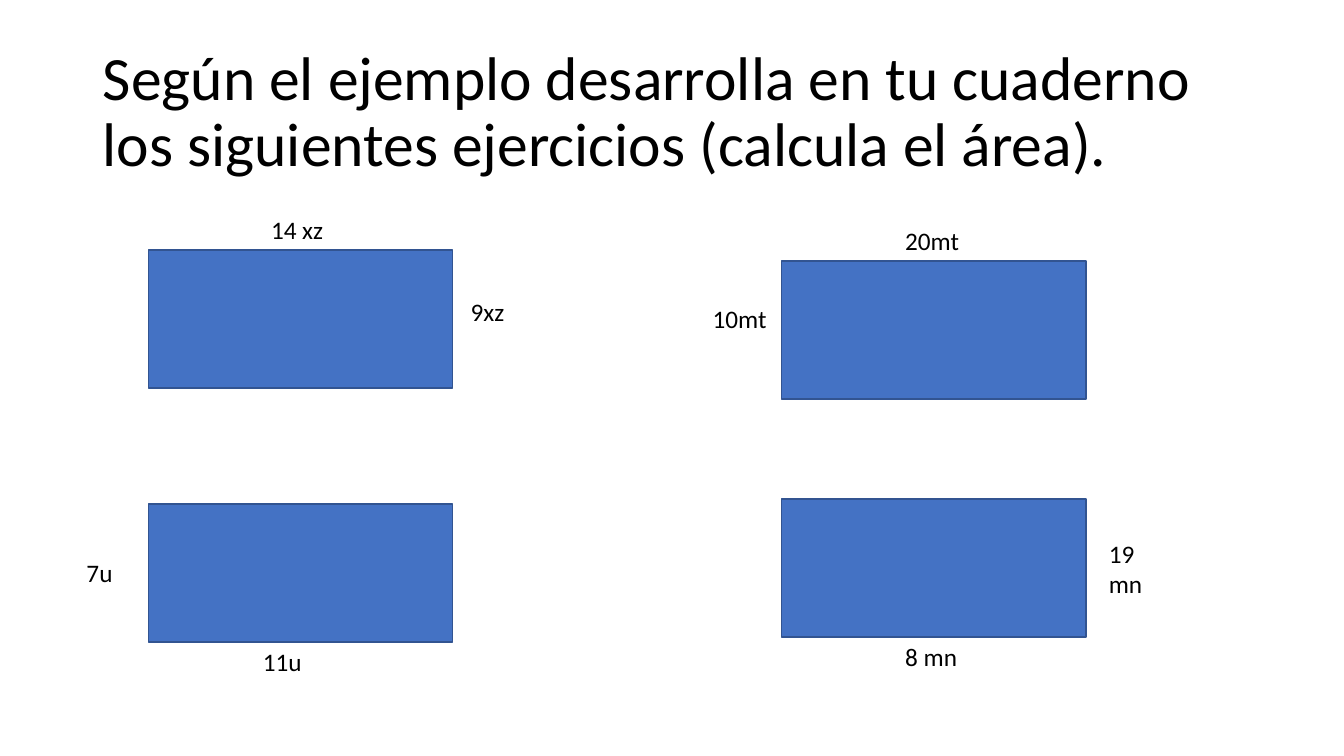
from dataclasses import dataclass

from pptx import Presentation
from pptx.dml.color import RGBColor
from pptx.enum.shapes import MSO_SHAPE
from pptx.enum.text import MSO_ANCHOR, MSO_AUTO_SIZE, PP_ALIGN
from pptx.slide import Slide
from pptx.text.text import TextFrame
from pptx.util import Inches, Pt

RECT = MSO_SHAPE.RECTANGLE
LEFT = PP_ALIGN.LEFT
TOP, MIDDLE = MSO_ANCHOR.TOP, MSO_ANCHOR.MIDDLE
NO_FIT, GROW = MSO_AUTO_SIZE.NONE, MSO_AUTO_SIZE.SHAPE_TO_FIT_TEXT

BLACK = RGBColor(0x00, 0x00, 0x00)
BLUE = RGBColor(0x44, 0x72, 0xC4)
EDGE = RGBColor(0x32, 0x54, 0x91)

FONT = "Calibri"
TITLE = "Según el ejemplo desarrolla en tu cuaderno los siguientes ejercicios (calcula el área). "
BOX_W, BOX_H = 3.02, 1.37
LABEL_W = 0.8
COL_1, COL_2 = 1.47, 7.75


@dataclass
class Label:
    text: str
    left: float
    top: float
    height: float = 0.4


@dataclass
class Exercise:
    left: float
    top: float
    base: Label
    side: Label


EXERCISES = [
    Exercise(COL_1, 2.48, Label("14 xz", 2.59, 2.08), Label("9xz", 4.57, 2.89)),
    Exercise(COL_1, 5, Label("11u", 2.51, 6.36), Label("7u", 0.76, 5.48)),
    Exercise(COL_2, 4.95, Label("8 mn", 8.88, 6.31), Label("19 mn", 10.9, 5.29, 0.71)),
    Exercise(COL_2, 2.59, Label("20mt", 8.88, 2.19), Label("10mt", 6.97, 2.96)),
]


def write(frame: TextFrame, text: str, *, size: float = 18, spacing: float = 1,
          anchor: MSO_ANCHOR = TOP, fit: MSO_AUTO_SIZE = GROW) -> None:
    frame.word_wrap = True
    frame.auto_size = fit
    frame.vertical_anchor = anchor
    line = frame.paragraphs[0]
    line.alignment = LEFT
    line.line_spacing = spacing
    run = line.add_run()
    run.text = text
    run.font.name = FONT
    run.font.size = Pt(size)
    run.font.color.rgb = BLACK


def add_title(slide: Slide) -> None:
    title = slide.shapes.title
    title.left, title.top = Inches(0.92), Inches(0.4)
    title.width, title.height = Inches(11.5), Inches(1.45)
    write(title.text_frame, TITLE, size=44, spacing=0.9, anchor=MIDDLE, fit=NO_FIT)


def add_label(slide: Slide, label: Label) -> None:
    box = slide.shapes.add_textbox(Inches(label.left), Inches(label.top),
                                   Inches(LABEL_W), Inches(label.height))
    write(box.text_frame, label.text)


def add_exercise(slide: Slide, task: Exercise) -> None:
    """Draw a rectangle with the lengths of its base and side."""
    box = slide.shapes.add_shape(RECT, Inches(task.left), Inches(task.top),
                                 Inches(BOX_W), Inches(BOX_H))
    box.shadow.inherit = False
    box.fill.solid()
    box.fill.fore_color.rgb = BLUE
    box.line.color.rgb = EDGE
    box.line.width = Pt(1)
    add_label(slide, task.base)
    add_label(slide, task.side)


def main() -> None:
    deck = Presentation()
    deck.slide_width, deck.slide_height = Inches(13.33), Inches(7.5)
    slide = deck.slides.add_slide(deck.slide_layouts.get_by_name("Title Only"))
    add_title(slide)
    for task in EXERCISES:
        add_exercise(slide, task)
    deck.save("out.pptx")


if __name__ == "__main__":
    main()
